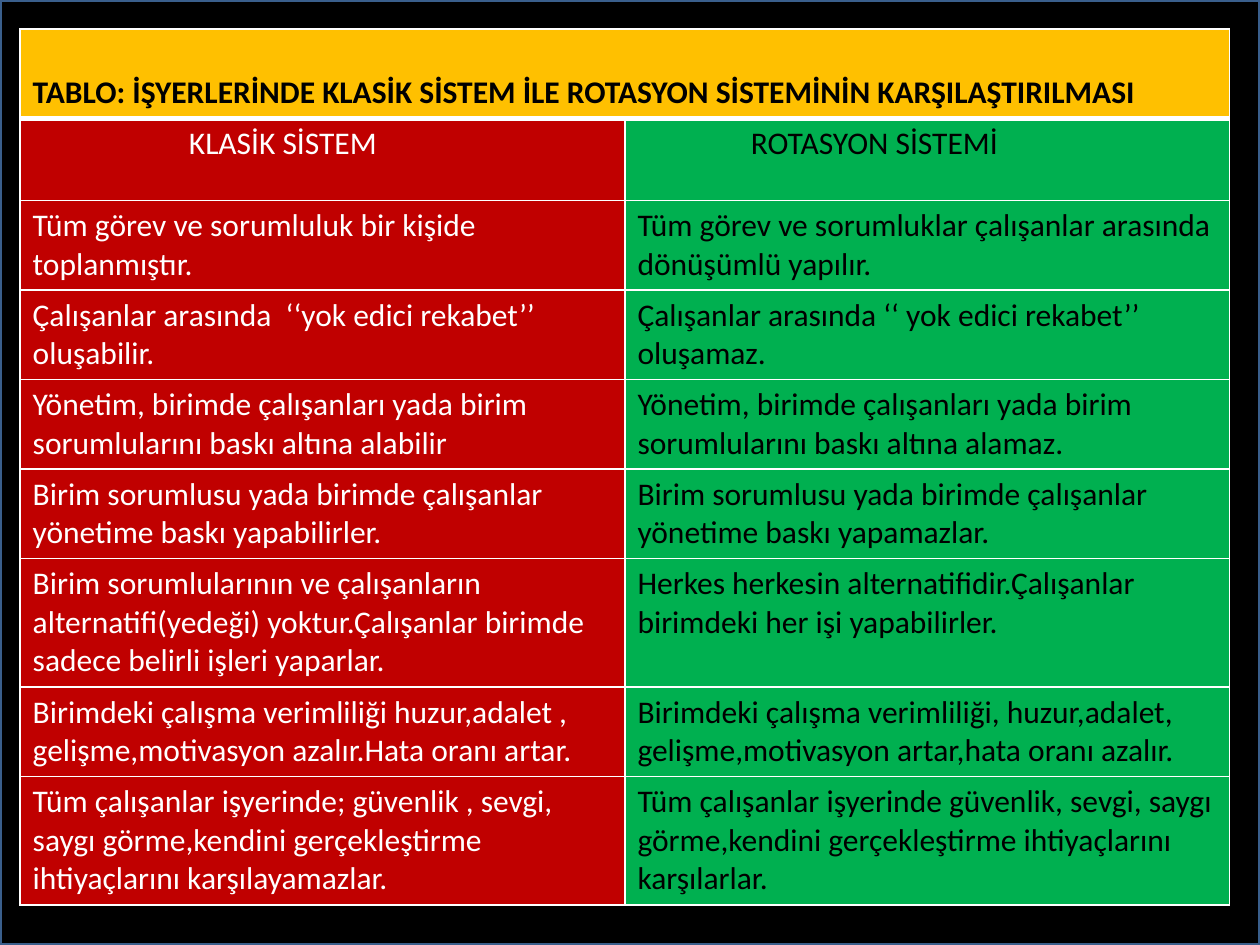
"""Build a slide with a table comparing the classic and rotation work systems."""
from dataclasses import dataclass

from lxml import etree
from pptx import Presentation
from pptx.dml.color import RGBColor
from pptx.enum import shapes, text
from pptx.oxml import ns
from pptx.util import Inches, Pt


@dataclass(frozen=True)
class Theme:
    font: str = "Calibri"
    size: int = 18
    black: str = "000000"
    white: str = "FFFFFF"
    frame: str = "3A5F8C"
    title: str = "FFC000"
    classic: str = "C00000"
    rotation: str = "00B050"


theme = Theme()

TITLE = "TABLO: İŞYERLERİNDE KLASİK SİSTEM İLE ROTASYON SİSTEMİNİN KARŞILAŞTIRILMASI"
HEADINGS = ("KLASİK SİSTEM", "ROTASYON SİSTEMİ")
COMPARISONS = [
    ("Tüm görev ve sorumluluk bir kişide toplanmıştır.",
     "Tüm görev ve sorumluklar çalışanlar arasında dönüşümlü yapılır."),
    ("Çalışanlar arasında  ‘‘yok edici rekabet’’ oluşabilir.",
     "Çalışanlar arasında ‘‘ yok edici rekabet’’ oluşamaz."),
    ("Yönetim, birimde çalışanları yada birim sorumlularını baskı altına alabilir",
     "Yönetim, birimde çalışanları yada birim sorumlularını baskı altına alamaz."),
    ("Birim sorumlusu yada birimde çalışanlar yönetime baskı yapabilirler.",
     "Birim sorumlusu yada birimde çalışanlar yönetime baskı yapamazlar."),
    ("Birim sorumlularının ve çalışanların alternatifi(yedeği) yoktur."
     "Çalışanlar birimde sadece belirli işleri yaparlar.",
     "Herkes herkesin alternatifidir.Çalışanlar birimdeki her işi yapabilirler."),
    ("Birimdeki çalışma verimliliği huzur,adalet , gelişme,motivasyon azalır."
     "Hata oranı artar.",
     "Birimdeki çalışma verimliliği, huzur,adalet, gelişme,motivasyon artar,"
     "hata oranı azalır."),
    ("Tüm çalışanlar işyerinde; güvenlik , sevgi, saygı görme,"
     "kendini gerçekleştirme ihtiyaçlarını karşılayamazlar.",
     "Tüm çalışanlar işyerinde güvenlik, sevgi, saygı görme,"
     "kendini gerçekleştirme ihtiyaçlarını karşılarlar."),
]
ROW_HEIGHTS = [0.71, 0.65, 0.71, 0.71, 0.71, 0.71, 1.02, 0.71, 1.02]
COLUMN_WIDTH = 4.8
HEADING_MARGINS = (1.34, 1.0)


def write_cell(cell, words, fill, color, bold=False):
    cell.fill.solid()
    cell.fill.fore_color.rgb = RGBColor.from_string(fill)
    cell.text = words
    font = cell.text_frame.paragraphs[0].font
    font.name = theme.font
    font.size = Pt(theme.size)
    font.bold = bold
    font.color.rgb = RGBColor.from_string(color)


def draw_borders(cell, top, bottom):
    properties = cell._tc.get_or_add_tcPr()
    widths = {"lnL": 1, "lnR": 1, "lnT": top, "lnB": bottom}
    for position, (side, width) in enumerate(widths.items()):
        line = etree.Element(ns.qn(f"a:{side}"), w=str(Pt(width)))
        fill = etree.SubElement(line, ns.qn("a:solidFill"))
        etree.SubElement(fill, ns.qn("a:srgbClr"), val=theme.white)
        properties.insert(position, line)


deck = Presentation()
deck.slide_width, deck.slide_height = Inches(10), Inches(7.5)
page = deck.slides.add_slide(deck.slide_layouts[6])

backdrop = page.shapes.add_shape(
    shapes.MSO_SHAPE.RECTANGLE, 0, 0, deck.slide_width, deck.slide_height)
backdrop.shadow.inherit = False
backdrop.fill.solid()
backdrop.fill.fore_color.rgb = RGBColor.from_string(theme.black)
backdrop.line.color.rgb = RGBColor.from_string(theme.frame)
backdrop.line.width = Pt(2)

table = page.shapes.add_table(
    len(ROW_HEIGHTS), len(HEADINGS), Inches(0.16), Inches(0.23),
    Inches(COLUMN_WIDTH * len(HEADINGS)), Inches(sum(ROW_HEIGHTS))).table
for column in table.columns:
    column.width = Inches(COLUMN_WIDTH)
for row, height in zip(table.rows, ROW_HEIGHTS):
    row.height = Inches(height)

title_cell = table.cell(0, 0)
title_cell.merge(table.cell(0, 1))
write_cell(title_cell, TITLE, theme.title, theme.black, bold=True)
title_cell.vertical_anchor = text.MSO_ANCHOR.BOTTOM

column_colors = ((theme.classic, theme.white), (theme.rotation, theme.black))
for row_number, entries in enumerate([HEADINGS, *COMPARISONS], start=1):
    for column_number, words in enumerate(entries):
        write_cell(table.cell(row_number, column_number), words,
                   *column_colors[column_number])

for column_number, margin in enumerate(HEADING_MARGINS):
    table.cell(1, column_number).margin_left = Inches(margin)

for row_number, row in enumerate(table.rows):
    for cell in row.cells:
        draw_borders(cell, top=3 if row_number == 1 else 1,
                     bottom=3 if row_number == 0 else 1)

deck.save("out.pptx")
